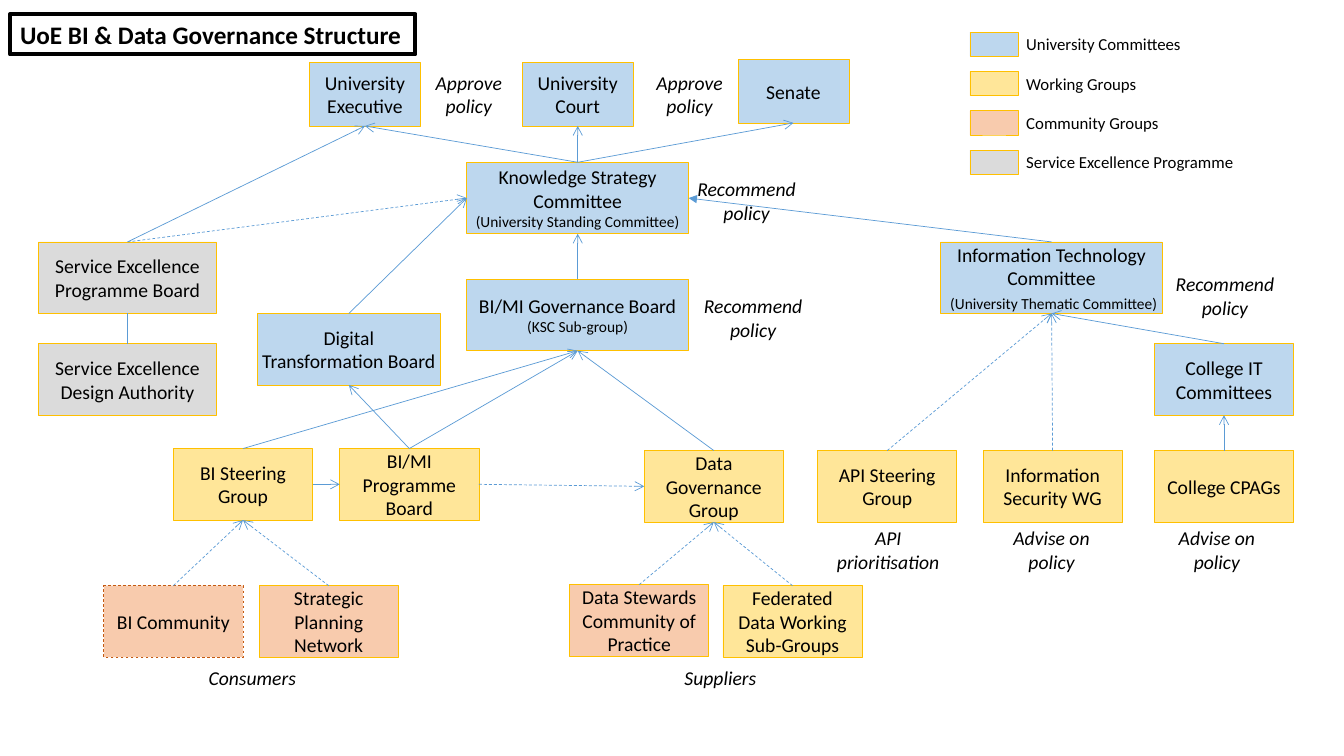
from dataclasses import dataclass

from lxml.etree import SubElement
from pptx import Presentation
from pptx.dml.color import RGBColor
from pptx.enum.dml import MSO_LINE
from pptx.enum.shapes import MSO_CONNECTOR, MSO_SHAPE
from pptx.enum.text import MSO_ANCHOR, MSO_AUTO_SIZE, PP_ALIGN
from pptx.oxml.ns import qn
from pptx.util import Inches, Pt


@dataclass(frozen=True)
class Theme:
    font: str = "Calibri"
    text: str = "000000"
    committee: str = "BDD7EE"
    working: str = "FFE699"
    community: str = "F8CBAD"
    programme: str = "DBDBDB"
    border: str = "FFC000"
    community_border: str = "C55A11"
    link: str = "5B9BD5"
    title_size: int = 18
    body_size: int = 14
    legend_size: int = 12
    note_size: int = 11
    thin: float = 0.5
    thick: float = 3


THEME = Theme()
TOP, LEFT, BOTTOM, RIGHT = range(4)

# Box sizes: width, height
GROUP = (1.38, 0.71)
TOP_BODY = (1.1, 0.63)
MAIN = (2.2, 0.71)
SERVICE = (1.77, 0.71)
DIGITAL = (1.82, 0.71)

# key: left, top, size, fill, side inset, paragraphs; a pair is text with a small note
BODIES = {
    "executive": (2.69, 0.03, TOP_BODY, THEME.committee, 0.1, ["University Executive"]),
    "court": (4.8, 0.03, TOP_BODY, THEME.committee, 0.1, ["University Court"]),
    "senate": (6.94, 0, TOP_BODY, THEME.committee, 0.1, ["Senate"]),
    "strategy": (4.25, 1.02, MAIN, THEME.committee, 0.08,
                 ["Knowledge Strategy Committee", ("", "(University Standing Committee)")]),
    "technology": (8.95, 1.81, MAIN, THEME.committee, 0.04,
                   ["Information Technology Committee", (" ", "(University Thematic Committee)")]),
    "governance": (4.25, 2.18, MAIN, THEME.committee, 0.04,
                   [("BI/MI Governance Board ", "(KSC Sub-group)")]),
    "digital": (2.17, 2.52, DIGITAL, THEME.committee, 0.04, ["Digital Transformation Board"]),
    "college_it": (11.07, 2.82, GROUP, THEME.committee, 0.1, ["College IT Committees"]),
    "service": (0, 1.81, SERVICE, THEME.programme, 0.1, ["Service Excellence Programme Board"]),
    "design": (0, 2.82, SERVICE, THEME.programme, 0.1, ["Service Excellence Design Authority"]),
    "steering": (1.34, 3.86, GROUP, THEME.working, 0.1, ["BI Steering Group"]),
    "bi_programme": (2.99, 3.86, GROUP, THEME.working, 0.1, ["BI/MI Programme Board"]),
    "data": (6.01, 3.88, GROUP, THEME.working, 0.1, ["Data Governance Group"]),
    "api": (7.73, 3.88, GROUP, THEME.working, 0.1, ["API Steering Group"]),
    "security": (9.37, 3.88, GROUP, THEME.working, 0.1, ["Information Security WG"]),
    "cpags": (11.07, 3.88, GROUP, THEME.working, 0.1, ["College CPAGs"]),
    "bi_community": (0.65, 5.22, GROUP, THEME.community, 0.1, ["BI Community"]),
    "planning": (2.19, 5.22, GROUP, THEME.community, 0.1, ["Strategic Planning Network"]),
    "stewards": (5.27, 5.21, GROUP, THEME.community, 0.1, ["Data Stewards Community of Practice"]),
    "federated": (6.79, 5.22, GROUP, THEME.working, 0.1, ["Federated Data Working Sub-Groups"]),
}

# from, side, to, side, dashed, arrowhead
LINKS = [
    ("strategy", TOP, "executive", BOTTOM, False, "arrow"),
    ("strategy", TOP, "court", BOTTOM, False, "arrow"),
    ("strategy", TOP, "senate", BOTTOM, False, "arrow"),
    ("service", TOP, "executive", BOTTOM, False, "arrow"),
    ("service", TOP, "strategy", LEFT, True, "arrow"),
    ("design", TOP, "service", BOTTOM, False, None),
    ("digital", TOP, "strategy", LEFT, False, "arrow"),
    ("governance", TOP, "strategy", BOTTOM, False, "arrow"),
    ("technology", TOP, "strategy", RIGHT, False, "triangle"),
    ("college_it", TOP, "technology", BOTTOM, False, "arrow"),
    ("api", TOP, "technology", BOTTOM, True, "arrow"),
    ("security", TOP, "technology", BOTTOM, True, "arrow"),
    ("cpags", TOP, "college_it", BOTTOM, False, "arrow"),
    ("steering", TOP, "governance", BOTTOM, False, "arrow"),
    ("bi_programme", TOP, "governance", BOTTOM, False, "arrow"),
    ("data", TOP, "governance", BOTTOM, False, "arrow"),
    ("bi_programme", TOP, "digital", BOTTOM, False, "arrow"),
    ("steering", RIGHT, "bi_programme", LEFT, False, "arrow"),
    ("bi_programme", RIGHT, "data", LEFT, True, "arrow"),
    ("bi_community", TOP, "steering", BOTTOM, True, "arrow"),
    ("planning", TOP, "steering", BOTTOM, True, "arrow"),
    ("stewards", TOP, "data", BOTTOM, True, "arrow"),
    ("federated", TOP, "data", BOTTOM, True, "arrow"),
]

# left, top, width, height, paragraphs, alignment
REMARKS = [
    (3.79, 0.06, 0.96, 0.57, ["Approve", "policy"], PP_ALIGN.CENTER),
    (5.98, 0.06, 0.96, 0.57, ["Approve", "policy"], PP_ALIGN.CENTER),
    (6.39, 1.12, 1.27, 0.57, ["Recommend", "policy"], PP_ALIGN.CENTER),
    (6.45, 2.28, 1.28, 0.57, ["Recommend", "policy"], PP_ALIGN.CENTER),
    (11.14, 2.06, 1.26, 0.57, ["Recommend", "policy"], PP_ALIGN.CENTER),
    (7.75, 4.58, 1.36, 0.57, ["API prioritisation"], PP_ALIGN.CENTER),
    (9.45, 4.58, 1.2, 0.57, ["Advise on policy"], PP_ALIGN.CENTER),
    (11.09, 4.58, 1.2, 0.57, ["Advise on policy"], PP_ALIGN.CENTER),
    (1.59, 5.97, 1.15, 0.34, ["Consumers"], PP_ALIGN.LEFT),
    (6.31, 5.97, 1.03, 0.34, ["Suppliers"], PP_ALIGN.LEFT),
]

LEGEND = [
    ("University Committees", THEME.committee),
    ("Working Groups", THEME.working),
    ("Community Groups", THEME.community),
    ("Service Excellence Programme", THEME.programme),
]


def apply_format(target, values):
    for name, value in values.items():
        setattr(target, name, value)


def write(shape, paragraphs, size, align, frame_format, **font_format):
    frame = shape.text_frame
    apply_format(frame, {"word_wrap": True, **frame_format})
    for index, content in enumerate(paragraphs):
        paragraph = frame.paragraphs[0] if index == 0 else frame.add_paragraph()
        paragraph.alignment = align
        text, note = content if isinstance(content, tuple) else (content, "")
        for words, points in ((text, size), (note, THEME.note_size)):
            if words:
                run = paragraph.add_run()
                run.text = words
                apply_format(run.font, {"name": THEME.font, "size": Pt(points), **font_format})
                run.font.color.rgb = RGBColor.from_string(THEME.text)


def add_box(slide, left, top, width, height, fill, border=THEME.border, weight=THEME.thin):
    box = slide.shapes.add_shape(MSO_SHAPE.RECTANGLE, *map(Inches, (left, top, width, height)))
    box.shadow.inherit = False
    if fill:
        box.fill.solid()
        box.fill.fore_color.rgb = RGBColor.from_string(fill)
    else:
        box.fill.background()
    box.line.color.rgb = RGBColor.from_string(border)
    box.line.width = Pt(weight)
    return box


def add_label(slide, left, top, width, height, paragraphs, size, align, **font_format):
    label = slide.shapes.add_textbox(*map(Inches, (left, top, width, height)))
    write(label, paragraphs, size, align, {"auto_size": MSO_AUTO_SIZE.SHAPE_TO_FIT_TEXT}, **font_format)


def add_link(slide, source, source_side, target, target_side, dashed, arrowhead):
    link = slide.shapes.add_connector(MSO_CONNECTOR.STRAIGHT, 0, 0, 0, 0)
    link.begin_connect(source, source_side)
    link.end_connect(target, target_side)
    link.line.color.rgb = RGBColor.from_string(THEME.link)
    link.line.width = Pt(THEME.thin)
    if dashed:
        link.line.dash_style = MSO_LINE.DASH
    if arrowhead:
        SubElement(link.line._get_or_add_ln(), qn("a:tailEnd"), type=arrowhead)
    SubElement(link._element.spPr, qn("a:effectLst"))


def draw_title(slide, left, top, width, height):
    title = add_box(slide, left, top, width, height, None, THEME.text, THEME.thick)
    write(title, ["UoE BI & Data Governance Structure"], THEME.title_size, PP_ALIGN.LEFT,
          {"word_wrap": False, "vertical_anchor": MSO_ANCHOR.TOP,
           "auto_size": MSO_AUTO_SIZE.SHAPE_TO_FIT_TEXT}, bold=True)


def draw_legend(slide, left, top, width, pitch):
    for row, (meaning, fill) in enumerate(LEGEND):
        row_top = top + row * pitch
        add_box(slide, left, row_top, 0.48, 0.24, fill)
        add_label(slide, left + 0.46, row_top - 0.03, width - 0.46, 0.3, [meaning],
                  THEME.legend_size, PP_ALIGN.LEFT)


def draw_structure(slide, left, top):
    # Committees and groups
    bodies = {}
    for key, (x, y, size, fill, inset, paragraphs) in BODIES.items():
        bodies[key] = add_box(slide, left + x, top + y, *size, fill)
        write(bodies[key], paragraphs, THEME.body_size, PP_ALIGN.CENTER,
              {"vertical_anchor": MSO_ANCHOR.MIDDLE,
               "margin_left": Inches(inset), "margin_right": Inches(inset)})
    informal = bodies["bi_community"].line
    informal.color.rgb = RGBColor.from_string(THEME.community_border)
    informal.dash_style = MSO_LINE.DASH

    # Reporting lines
    for source, source_side, target, target_side, dashed, arrowhead in LINKS:
        add_link(slide, bodies[source], source_side, bodies[target], target_side, dashed, arrowhead)

    # Roles beside the bodies
    for x, y, width, height, paragraphs, align in REMARKS:
        add_label(slide, left + x, top + y, width, height, paragraphs, THEME.body_size, align, italic=True)


def main():
    deck = Presentation()
    apply_format(deck, {"slide_width": Inches(13.33), "slide_height": Inches(7.5)})
    slide = deck.slides.add_slide(deck.slide_layouts[6])
    draw_structure(slide, 0.38, 0.59)
    draw_title(slide, 0.1, 0.14, 4.02, 0.4)
    draw_legend(slide, 9.62, 0.32, 3.44, 0.39)
    deck.save("out.pptx")


if __name__ == "__main__":
    main()
